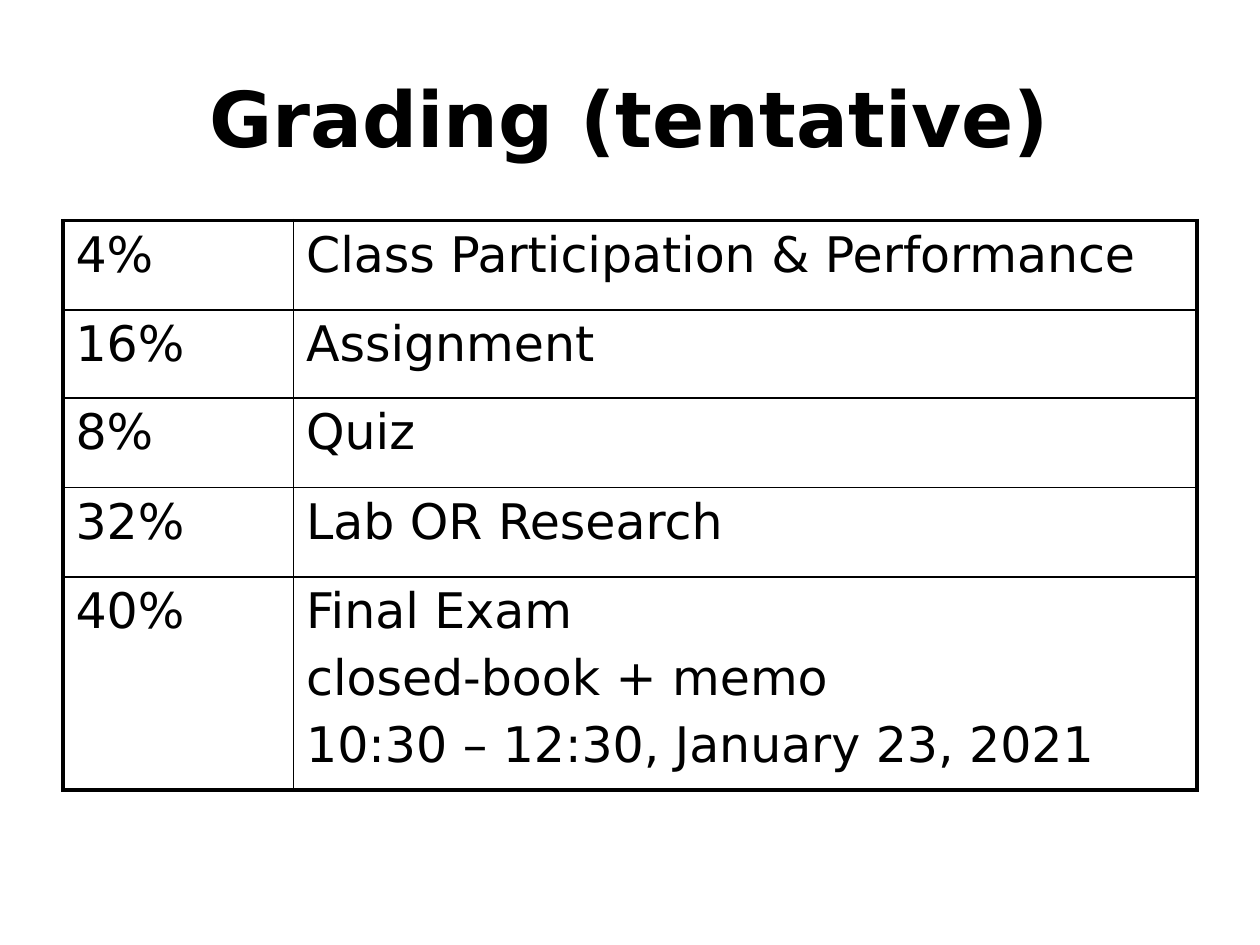
import pptx
import pptx.util
import pptx.dml.color
import pptx.enum.text
import pptx.oxml.ns
import lxml.etree

Inches = pptx.util.Inches
Pt = pptx.util.Pt

TITLE = "Grading (tentative)"
GRADING = [
    ("4%", "Class Participation & Performance"),
    ("16%", "Assignment"),
    ("8%", "Quiz"),
    ("32%", "Lab OR Research"),
    ("40%", "Final Exam\nclosed-book + memo\n10:30 – 12:30, January 23, 2021"),
]
COLUMN_WIDTHS = [1.83, 7.17]
ROW_HEIGHTS = [0.71, 0.7, 0.71, 0.71, 1.69]
COLORS = {"ink": "000000"}
FONT = "DejaVu Sans"
OUTER_LINE, INNER_LINE = 2.25, 1


def style_text(frame, size, bold=False):
    for para in frame.paragraphs:
        for run in para.runs:
            run.font.name = FONT
            run.font.size = Pt(size)
            run.font.bold = bold
            run.font.color.rgb = pptx.dml.color.RGBColor.from_string(COLORS["ink"])


def add_border(cell, side, width):
    qn = pptx.oxml.ns.qn
    properties = cell._tc.get_or_add_tcPr()
    line = lxml.etree.SubElement(properties, qn(f"a:ln{side}"), w=str(Pt(width)))
    fill = lxml.etree.SubElement(line, qn("a:solidFill"))
    lxml.etree.SubElement(fill, qn("a:srgbClr"), val=COLORS["ink"])


def add_title(page):
    box = page.shapes.add_textbox(Inches(0.5), Inches(0.3), Inches(9), Inches(1.25))
    frame = box.text_frame
    frame.word_wrap = True
    frame.vertical_anchor = pptx.enum.text.MSO_ANCHOR.MIDDLE
    frame.text = TITLE
    frame.paragraphs[0].alignment = pptx.enum.text.PP_ALIGN.CENTER
    style_text(frame, 44, bold=True)


def add_grading_table(page):
    row_count, column_count = len(GRADING), len(COLUMN_WIDTHS)
    table = page.shapes.add_table(
        row_count, column_count, Inches(0.5), Inches(1.75),
        Inches(sum(COLUMN_WIDTHS)), Inches(sum(ROW_HEIGHTS)),
    ).table
    table.first_row = False
    table.horz_banding = False
    for column, width in zip(table.columns, COLUMN_WIDTHS):
        column.width = Inches(width)
    for row, height in zip(table.rows, ROW_HEIGHTS):
        row.height = Inches(height)

    for r, entry in enumerate(GRADING):
        for c, text in enumerate(entry):
            cell = table.cell(r, c)
            cell.text_frame.text = text
            style_text(cell.text_frame, 28)
            for para in cell.text_frame.paragraphs[1:]:
                para.space_before = Pt(5.6)
            outer_sides = {
                "L": c == 0,
                "R": c == column_count - 1,
                "T": r == 0,
                "B": r == row_count - 1,
            }
            for side, is_outer in outer_sides.items():
                add_border(cell, side, OUTER_LINE if is_outer else INNER_LINE)
            cell.fill.background()


def main():
    deck = pptx.Presentation()
    deck.slide_width, deck.slide_height = Inches(10), Inches(7.5)
    page = deck.slides.add_slide(deck.slide_layouts[6])
    add_title(page)
    add_grading_table(page)
    deck.save("out.pptx")


if __name__ == "__main__":
    main()
